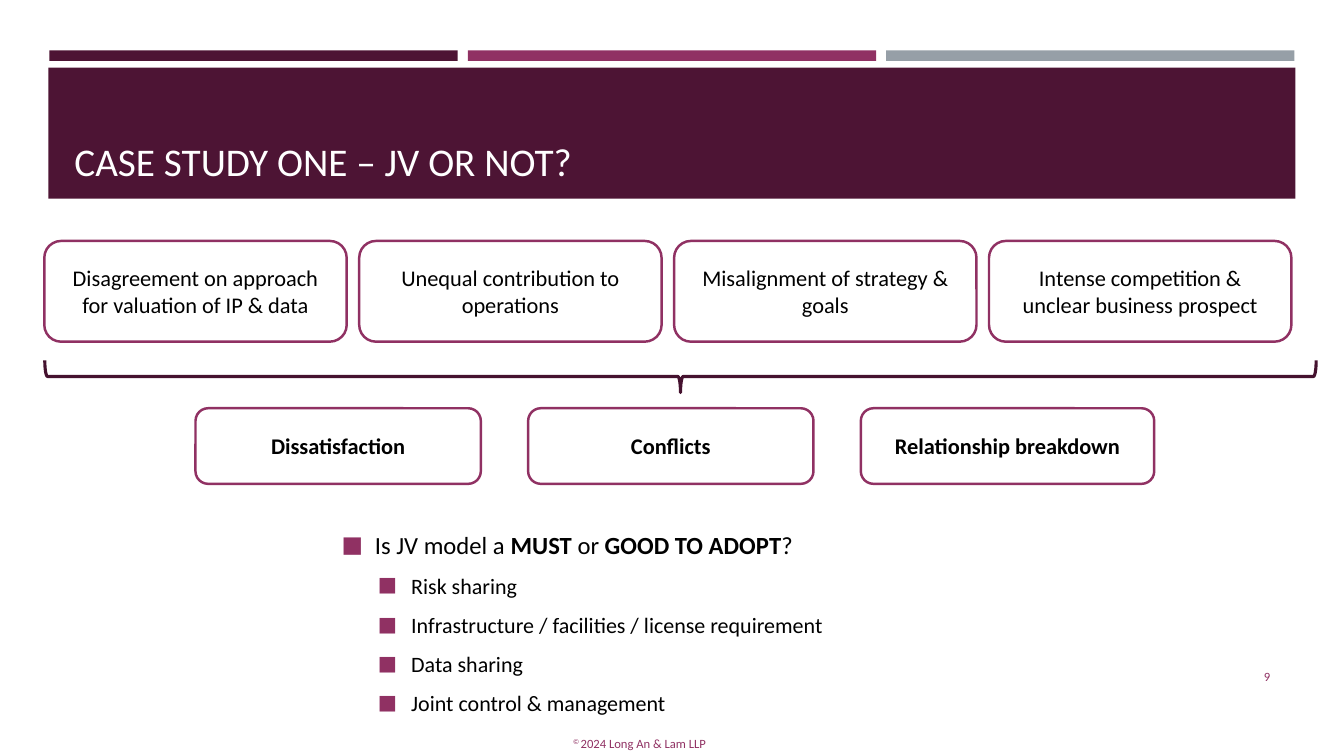
from lxml import etree
from pptx import Presentation
from pptx import util as u
from pptx.dml import color as clr
from pptx.enum import shapes, text
from pptx.oxml import ns

COLORS = {
    "plum": "4D1434", "magenta": "903163", "gray": "969FA7",
    "brace": "45122F", "white": "FFFFFF", "black": "000000",
}
ALIGN = {"l": text.PP_ALIGN.LEFT, "c": text.PP_ALIGN.CENTER, "r": text.PP_ALIGN.RIGHT}
ANCHOR = {"t": text.MSO_ANCHOR.TOP, "m": text.MSO_ANCHOR.MIDDLE, "b": text.MSO_ANCHOR.BOTTOM}


def rgb(name):
    return clr.RGBColor.from_string(COLORS[name])


def write(p, words, size=16, color="black", bold=False, raised=False):
    r = p.add_run()
    r.text = words
    r.font.name = "Calibri"
    r.font.size = u.Pt(size)
    r.font.bold = bold
    r.font.color.rgb = rgb(color)
    if raised:
        r.font._element.set("baseline", "30000")


class Deck:
    def __init__(self):
        self.prs = Presentation()
        self.prs.slide_width, self.prs.slide_height = u.Inches(13.33), u.Inches(7.5)
        self.s = self.prs.slides.add_slide(self.prs.slide_layouts[6])

    def place(self, x, y, w, h):
        sw, sh = self.prs.slide_width, self.prs.slide_height
        return [round(v * side / 100) for v, side in zip((x, y, w, h), (sw, sh, sw, sh))]

    def shape(self, kind, box, fill=None, line=None, width=1.75):
        sp = self.s.shapes.add_shape(kind, *self.place(*box))
        sp.shadow.inherit = False
        if fill:
            sp.fill.solid()
            sp.fill.fore_color.rgb = rgb(fill)
        else:
            sp.fill.background()
        if line:
            sp.line.color.rgb = rgb(line)
            sp.line.width = u.Pt(width)
        else:
            sp.line.fill.background()
        return sp

    def bar(self, box, fill):
        self.shape(shapes.MSO_SHAPE.RECTANGLE, box, fill)

    def card(self, box, words, bold=False):
        sp = self.shape(shapes.MSO_SHAPE.ROUNDED_RECTANGLE, box, "white", "magenta")
        tf = sp.text_frame
        tf.word_wrap = True
        tf.vertical_anchor = ANCHOR["m"]
        p = tf.paragraphs[0]
        p.alignment = ALIGN["c"]
        write(p, words, bold=bold)

    def brace(self, box):
        sp = self.shape(shapes.MSO_SHAPE.RIGHT_BRACE, box, line="brace", width=2.25)
        sp.rotation = 90

    def label(self, box, runs, align="l", anchor="t"):
        tf = self.s.shapes.add_textbox(*self.place(*box)).text_frame
        tf.word_wrap = True
        tf.vertical_anchor = ANCHOR[anchor]
        p = tf.paragraphs[0]
        p.alignment = ALIGN[align]
        for words, style in runs:
            write(p, words, **style)
        return tf

    def bullet(self, p, level, indent):
        p.level = level
        pPr = p._p.get_or_add_pPr()
        pPr.set("marL", str(round(indent * self.prs.slide_width / 100)))
        pPr.set("indent", str(round(-2.48 * self.prs.slide_width / 100)))
        bu_clr = etree.SubElement(pPr, ns.qn("a:buClr"))
        etree.SubElement(bu_clr, ns.qn("a:srgbClr"), val=COLORS["magenta"])
        etree.SubElement(pPr, ns.qn("a:buSzPct"), val="92000")
        etree.SubElement(pPr, ns.qn("a:buFont"), typeface="Calibri")
        etree.SubElement(pPr, ns.qn("a:buChar"), char="■")
        p.space_after = u.Pt(6)

    def outline(self, box, question, points):
        tf = self.label(box, question, anchor="m")
        self.bullet(tf.paragraphs[0], 0, 2.48)
        for words in points:
            p = tf.add_paragraph()
            self.bullet(p, 1, 5.18)
            p.space_before = u.Pt(3.2)
            write(p, words, size=15.7)


def main():
    d = Deck()
    for i, fill in enumerate(("plum", "magenta", "gray")):
        d.bar((3.68 + 31.13 * i, 6.67, 30.38, 1.4), fill)
    d.bar((3.6, 8.96, 92.78, 17.33), "plum")

    small = {"size": 9, "color": "magenta"}
    d.label((22.58, 96.67, 50, 3.33),
            [("© ", {**small, "raised": True}), ("2024 Long An & Lam LLP", small)], align="c")
    d.label((4.8, 10.27, 90.45, 14.8),
            [("CASE STUDY ONE – JV OR NOT?", {"size": 28, "color": "white"})], anchor="b")
    d.label((86.63, 86.8, 8.63, 5.33), [("9", small)], align="r", anchor="m")

    causes = ("Disagreement on approach for valuation of IP & data",
              "Unequal contribution to operations",
              "Misalignment of strategy & goals",
              "Intense competition & unclear business prospect")
    for i, cause in enumerate(causes):
        d.card((3.3 + 23.43 * i, 31.87, 22.5, 13.33), cause)

    d.brace((49.43, -34.27, 2.4, 168.13))

    outcomes = (("Dissatisfaction", 21.23), ("Conflicts", 21.23), ("Relationship breakdown", 21.83))
    for i, (outcome, width) in enumerate(outcomes):
        d.card((14.55 + 24.75 * i, 54, width, 10), outcome, bold=True)

    plain = {"size": 17.6}
    strong = {"size": 17.6, "bold": True}
    d.outline((24.68, 69.73, 40.8, 25.33),
              [("Is JV model a ", plain), ("MUST ", strong), ("or", plain),
               (" GOOD TO ADOPT", strong), ("?", plain)],
              ("Risk sharing", "Infrastructure / facilities / license requirement",
               "Data sharing", "Joint control & management"))
    d.prs.save("out.pptx")


if __name__ == "__main__":
    main()
